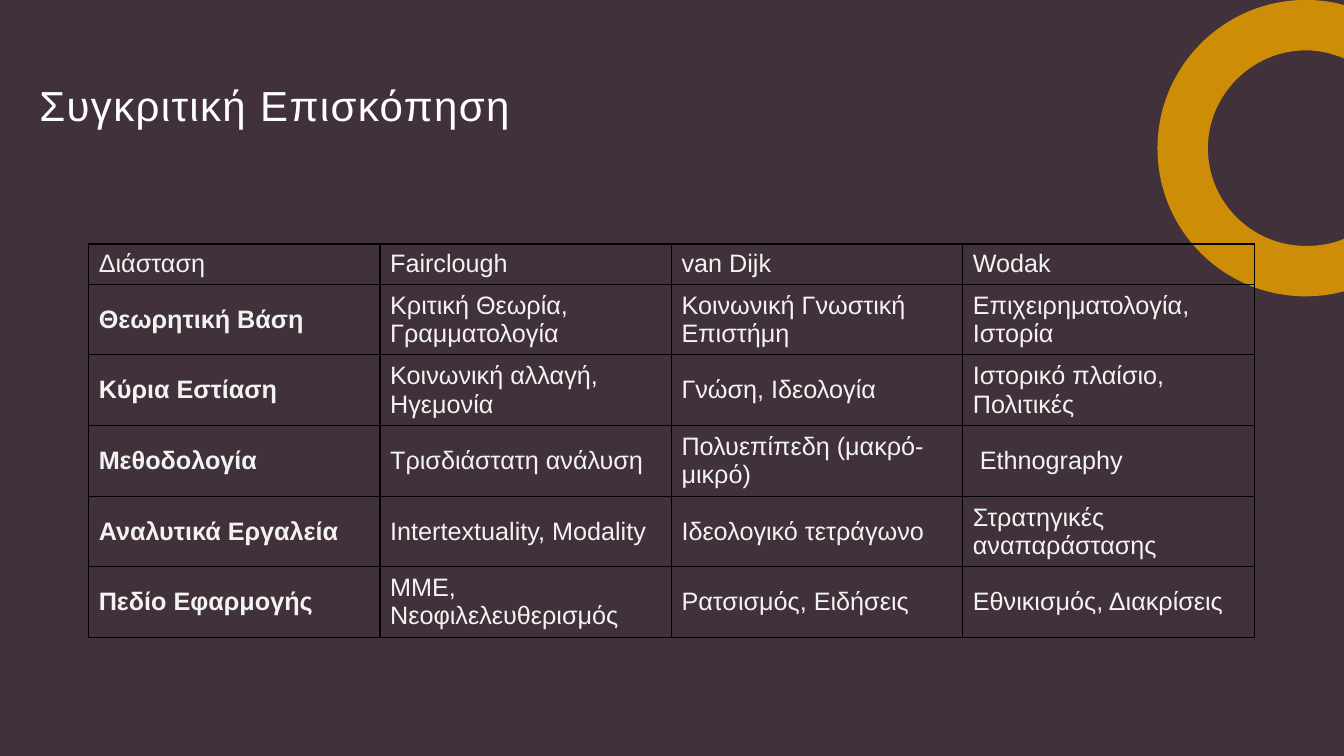
from pptx import Presentation
from pptx.dml.color import RGBColor
from pptx.enum.text import MSO_ANCHOR as Anchor
from pptx.oxml import parse_xml
from pptx.oxml.ns import nsdecls
from pptx.util import Inches, Pt

BACKGROUND = RGBColor(0x41, 0x31, 0x3B)
GOLD = RGBColor(0xCD, 0x8D, 0x06)
WHITE = RGBColor(0xFF, 0xFF, 0xFF)
CELL_TEXT = RGBColor(0xF3, 0xF3, 0xF2)
BORDER = RGBColor(0x00, 0x00, 0x00)

FONT = "Arial"
SLIDE_W, SLIDE_H = 13.33, 7.5
COLUMN_W = 2.89
ROW_HEIGHTS = [0.4] + [0.7] * 5
ROWS = [
    ["Διάσταση", "Fairclough", "van Dijk", "Wodak"],
    ["Θεωρητική Βάση", "Κριτική Θεωρία, Γραμματολογία",
     "Κοινωνική Γνωστική Επιστήμη", "Επιχειρηματολογία, Ιστορία"],
    ["Κύρια Εστίαση", "Κοινωνική αλλαγή, Ηγεμονία",
     "Γνώση, Ιδεολογία", "Ιστορικό πλαίσιο, Πολιτικές"],
    ["Μεθοδολογία", "Τρισδιάστατη ανάλυση",
     "Πολυεπίπεδη (μακρό-μικρό)", " Ethnography"],
    ["Αναλυτικά Εργαλεία", "Intertextuality, Modality",
     "Ιδεολογικό τετράγωνο", "Στρατηγικές αναπαράστασης"],
    ["Πεδίο Εφαρμογής", "ΜΜΕ, Νεοφιλελευθερισμός",
     "Ρατσισμός, Ειδήσεις", "Εθνικισμός, Διακρίσεις"],
]

# Ring outline: one point is a line, three points are a Bezier curve
RING_START = (12.95, 0)
RING_SEGMENTS = [
    [(13.05, 0), (13.15, 0.01), (13.25, 0.03)],
    [(SLIDE_W, 0.05)],
    [(SLIDE_W, 0.58)],
    [(13.21, 0.53), (13.09, 0.5), (12.95, 0.5)],
    [(12.42, 0.5), (11.98, 0.94), (11.98, 1.47)],
    [(11.98, 2.01), (12.42, 2.44), (12.95, 2.44)],
    [(13.09, 2.44), (13.21, 2.42), (SLIDE_W, 2.37)],
    [(SLIDE_W, 2.89)],
    [(13.25, 2.91)],
    [(13.15, 2.93), (13.05, 2.94), (12.95, 2.94)],
    [(12.14, 2.94), (11.48, 2.29), (11.48, 1.47)],
    [(11.48, 0.66), (12.14, 0), RING_START],
]


def format_run(r, size, color, bold=False):
    r.font.name = FONT
    r.font.size = Pt(size)
    r.font.bold = bold
    r.font.color.rgb = color


def add_curved_shape(s, start, segments, color):
    builder = s.shapes.build_freeform(Inches(start[0]), Inches(start[1]))
    builder.add_line_segments([(Inches(x), Inches(y))
                               for segment in segments for x, y in segment])
    sp = builder.convert_to_shape()

    # Merge each group of three line steps into one curve
    steps = iter(sp._element.xpath(".//a:lnTo"))
    for segment in segments:
        group = [next(steps) for _ in segment]
        if len(group) == 3:
            curve = parse_xml(f'<a:cubicBezTo {nsdecls("a")}/>')
            group[0].addprevious(curve)
            for step in group:
                curve.append(step[0])
                step.getparent().remove(step)

    sp.shadow.inherit = False
    sp.fill.solid()
    sp.fill.fore_color.rgb = color
    sp.line.fill.background()


def add_title(s, text, left, top, width, height):
    sp = s.shapes.add_textbox(Inches(left), Inches(top),
                              Inches(width), Inches(height))
    tf = sp.text_frame
    tf.word_wrap = True
    tf.margin_left = tf.margin_right = tf.margin_top = tf.margin_bottom = 0
    p = tf.paragraphs[0]
    p.text = text
    p.line_spacing = 0.9
    r = p.runs[0]
    format_run(r, 30, WHITE)
    r.font._element.set("spc", "100")


def add_borders(cell):
    tc_pr = cell._tc.get_or_add_tcPr()
    for side in "LRTB":
        tc_pr.append(parse_xml(
            f'<a:ln{side} {nsdecls("a")} w="{Pt(1)}"><a:solidFill>'
            f'<a:srgbClr val="{BORDER}"/></a:solidFill></a:ln{side}>'))


def add_comparison_table(s, left, top):
    n_cols = len(ROWS[0])
    frame = s.shapes.add_table(len(ROWS), n_cols, Inches(left), Inches(top),
                               Inches(COLUMN_W * n_cols),
                               Inches(sum(ROW_HEIGHTS)))
    table = frame.table
    table.first_row = table.horz_banding = False
    for column in table.columns:
        column.width = Inches(COLUMN_W)
    for row, height in zip(table.rows, ROW_HEIGHTS):
        row.height = Inches(height)
    for i, texts in enumerate(ROWS):
        for j, text in enumerate(texts):
            cell = table.cell(i, j)
            cell.vertical_anchor = Anchor.MIDDLE
            add_borders(cell)
            cell.fill.background()
            p = cell.text_frame.paragraphs[0]
            p.text = text
            format_run(p.runs[0], 18, CELL_TEXT, bold=i > 0 and j == 0)


def main():
    prs = Presentation()
    prs.slide_width, prs.slide_height = Inches(SLIDE_W), Inches(SLIDE_H)
    s = prs.slides.add_slide(prs.slide_layouts[6])

    # Background and corner ring
    s.background.fill.solid()
    s.background.fill.fore_color.rgb = BACKGROUND
    add_curved_shape(s, RING_START, RING_SEGMENTS, GOLD)

    # Title and table
    add_title(s, "Συγκριτική Επισκόπηση", 0.39, 0.85, 10.3, 0.74)
    add_comparison_table(s, 0.88, 2.42)

    prs.save("out.pptx")


if __name__ == "__main__":
    main()
